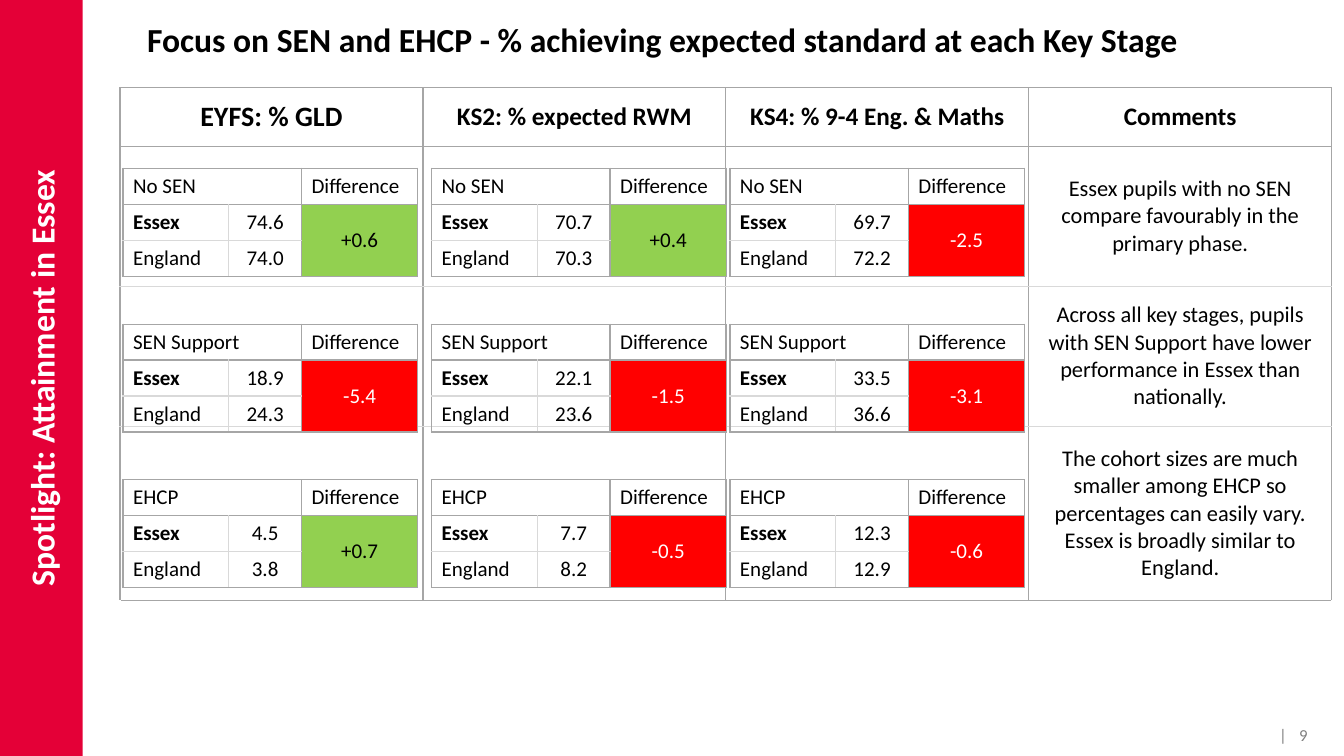
from lxml import etree
from pptx import Presentation
from pptx.dml.color import RGBColor
from pptx.enum.shapes import MSO_SHAPE
from pptx.enum.text import MSO_ANCHOR, PP_ALIGN
from pptx.oxml.ns import qn
from pptx.util import Inches, Pt

RECT = MSO_SHAPE.RECTANGLE
TOP, MIDDLE = MSO_ANCHOR.TOP, MSO_ANCHOR.MIDDLE
LEFT, CENTER, RIGHT = PP_ALIGN.LEFT, PP_ALIGN.CENTER, PP_ALIGN.RIGHT

BLACK, WHITE, GREY = "000000", "FFFFFF", "808080"
EDGE, INNER = "A6A6A6", "D9D9D9"
RISE, FALL, BRAND = "92D050", "FF0000", "E40037"

COMMENTS = [
    "Essex pupils with no SEN compare favourably in the primary phase.",
    "Across all key stages, pupils with SEN Support have lower performance in Essex than nationally.",
    "The cohort sizes are much smaller among EHCP so percentages can easily vary. "
    "Essex is broadly similar to England.",
]
STAGES = [
    ("EYFS: % GLD", 20, 9.15),
    ("KS2: % expected RWM", 18, 32.11),
    ("KS4: % 9-4 Eng. & Maths", 18, 54.31),
]
RESULTS = [
    ("No SEN", [(74.6, 74.0), (70.7, 70.3), (69.7, 72.2)]),
    ("SEN Support", [(18.9, 24.3), (22.1, 23.6), (33.5, 36.6)]),
    ("EHCP", [(4.5, 3.8), (7.7, 8.2), (12.3, 12.9)]),
]


def rgb(value):
    return RGBColor.from_string(value)


def put(tf, text, size=15, color=BLACK, bold=False, align=LEFT, spacing=0):
    p = tf.paragraphs[0]
    p.alignment = align
    r = p.add_run()
    r.text = text
    r.font.name, r.font.size, r.font.bold = "Calibri", Pt(size), bold
    r.font.color.rgb = rgb(color)
    if spacing:
        r.font._element.set("spc", str(spacing * 100))


class Board:
    """Draws styled elements on one slide, placed in percent of its size."""

    def __init__(self, prs):
        self.prs = prs
        self.s = prs.slides.add_slide(prs.slide_layouts[5])

    def x(self, share):
        return round(self.prs.slide_width * share / 100)

    def y(self, share):
        return round(self.prs.slide_height * share / 100)

    def title(self, text, left, top, width, height):
        sp = self.s.shapes.title
        sp.left, sp.top = self.x(left), self.y(top)
        sp.width, sp.height = self.x(width), self.y(height)
        tf = sp.text_frame
        tf.word_wrap, tf.vertical_anchor = False, TOP
        put(tf, text, size=24, bold=True, align=CENTER)

    def side_bar(self, text, width):
        length, depth = self.prs.slide_height, self.x(width)
        sp = self.s.shapes.add_shape(
            RECT, (depth - length) // 2, (length - depth) // 2, length, depth)
        sp.rotation = 270
        sp.shadow.inherit = False
        sp.fill.solid()
        sp.fill.fore_color.rgb = rgb(BRAND)
        sp.line.fill.background()
        tf = sp.text_frame
        tf.vertical_anchor = MIDDLE
        tf.margin_left = tf.margin_right = tf.margin_top = tf.margin_bottom = 0
        put(tf, text, size=24, color=WHITE, bold=True, align=CENTER)

    def page_number(self, number, left, top, width, height):
        sp = self.s.shapes.add_textbox(
            self.x(left), self.y(top), self.x(width), self.y(height))
        tf = sp.text_frame
        tf.word_wrap, tf.vertical_anchor, tf.margin_right = True, MIDDLE, 0
        put(tf, "| ", size=12, color=GREY, align=RIGHT, spacing=3)
        put(tf, number, size=12, color=GREY, align=RIGHT)

    def table(self, left, top, cols, rows):
        frame = self.s.shapes.add_table(
            len(rows), len(cols), self.x(left), self.y(top),
            self.x(sum(cols)), self.y(sum(rows)))
        tbl = frame.table
        tbl.first_row = tbl.horz_banding = False
        for col, share in zip(tbl.columns, cols):
            col.width = self.x(share)
        for row, share in zip(tbl.rows, rows):
            row.height = self.y(share)
        return tbl

    def cell(self, cell, text="", fill=None, borders=None, **style):
        cell.vertical_anchor = MIDDLE
        if fill:
            cell.fill.solid()
            cell.fill.fore_color.rgb = rgb(fill)
        else:
            cell.fill.background()
        tcPr = cell._tc.get_or_add_tcPr()
        for i, side in enumerate("LRTB"):
            ln = etree.Element(qn("a:ln" + side), w=str(Pt(1)))
            solid = etree.SubElement(ln, qn("a:solidFill"))
            etree.SubElement(solid, qn("a:srgbClr"), val=(borders or {}).get(side, EDGE))
            tcPr.insert(i, ln)
        if text:
            put(cell.text_frame, text, **style)

    def overview(self, left, top, cols, rows):
        tbl = self.table(left, top, cols, rows)
        heads = [(name, size) for name, size, _ in STAGES] + [("Comments", 18)]
        for c, (name, size) in enumerate(heads):
            self.cell(tbl.cell(0, c), name, size=size, bold=True, align=CENTER)
            for r, comment in enumerate(COMMENTS, 1):
                borders = {"T": INNER if r > 1 else EDGE,
                           "B": INNER if r < len(COMMENTS) else EDGE}
                self.cell(tbl.cell(r, c), comment if c == len(STAGES) else "",
                          borders=borders, size=16, align=CENTER)
            self.cell(tbl.cell(4, c), borders=dict.fromkeys("LRB", WHITE))
        tbl.cell(4, 0).merge(tbl.cell(4, 3))

    def comparison(self, left, top, group, essex, england):
        tbl = self.table(left, top, [7.88, 5.4, 8.66], [4.76] * 3)
        gap = essex - england
        fill, color = (RISE, BLACK) if gap > 0 else (FALL, WHITE)
        for c, text in enumerate([group, "", "Difference"]):
            self.cell(tbl.cell(0, c), text)
        for r, (area, value) in enumerate([("Essex", essex), ("England", england)], 1):
            across = "B" if r == 1 else "T"
            self.cell(tbl.cell(r, 0), area, bold=r == 1,
                      borders={"R": INNER, across: INNER})
            self.cell(tbl.cell(r, 1), f"{value:.1f}", align=CENTER,
                      borders={"L": INNER, across: INNER})
            self.cell(tbl.cell(r, 2), f"{gap:+.1f}" if r == 1 else "",
                      fill=fill, color=color, align=CENTER)
        tbl.cell(0, 0).merge(tbl.cell(0, 1))
        tbl.cell(1, 2).merge(tbl.cell(2, 2))


def main():
    prs = Presentation()
    prs.slide_width, prs.slide_height = Inches(13.33), Inches(7.5)
    board = Board(prs)
    board.overview(8.93, 11.6, [22.54] * 4, [7.73, 18.53, 18.53, 23.07, 18.53])
    for row, (group, pairs) in enumerate(RESULTS):
        for (_, _, left), (essex, england) in zip(STAGES, pairs):
            board.comparison(left, 22.27 + 20.6 * row, group, essex, england)
    board.title("Focus on SEN and EHCP - % achieving expected standard at each Key Stage",
                9.83, 1.87, 78.92, 6.67)
    board.side_bar("Spotlight: Attainment in Essex", 6.15)
    board.page_number("9", 90.92, 96.13, 6.38, 2)
    prs.save("out.pptx")


if __name__ == "__main__":
    main()
